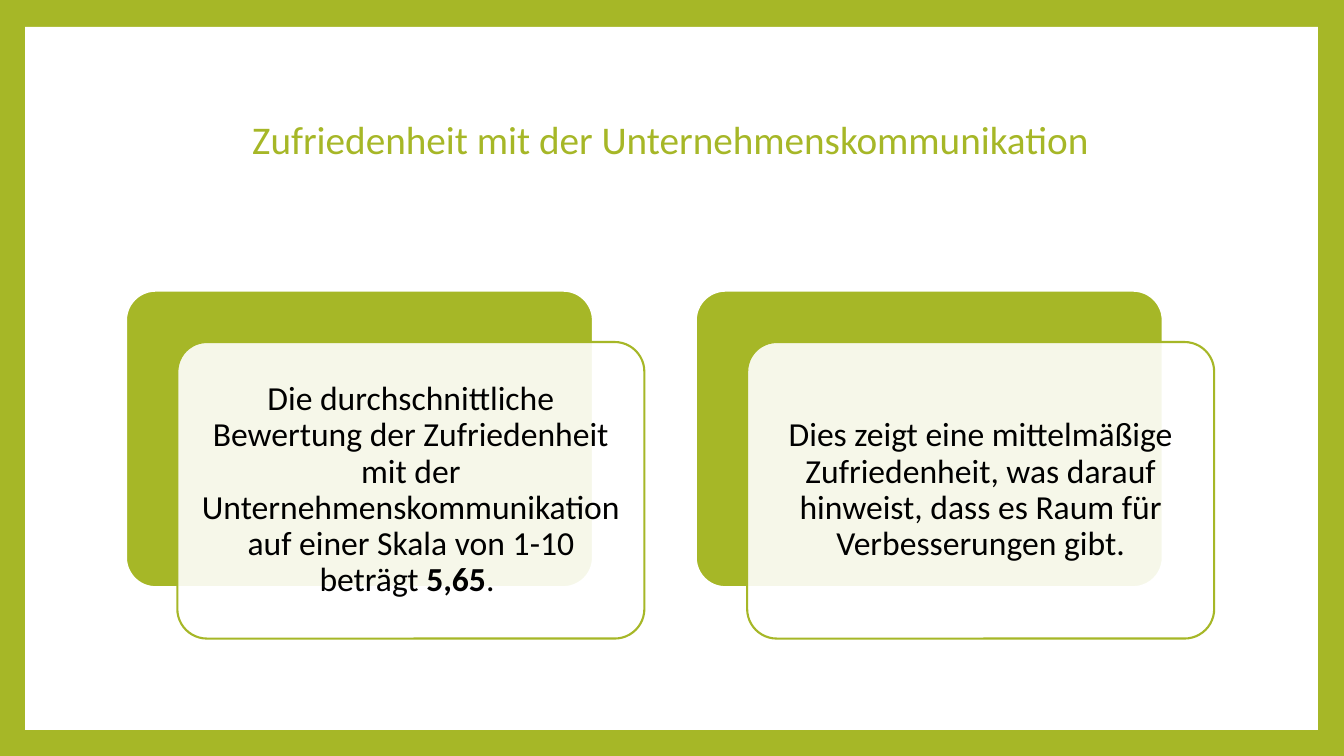
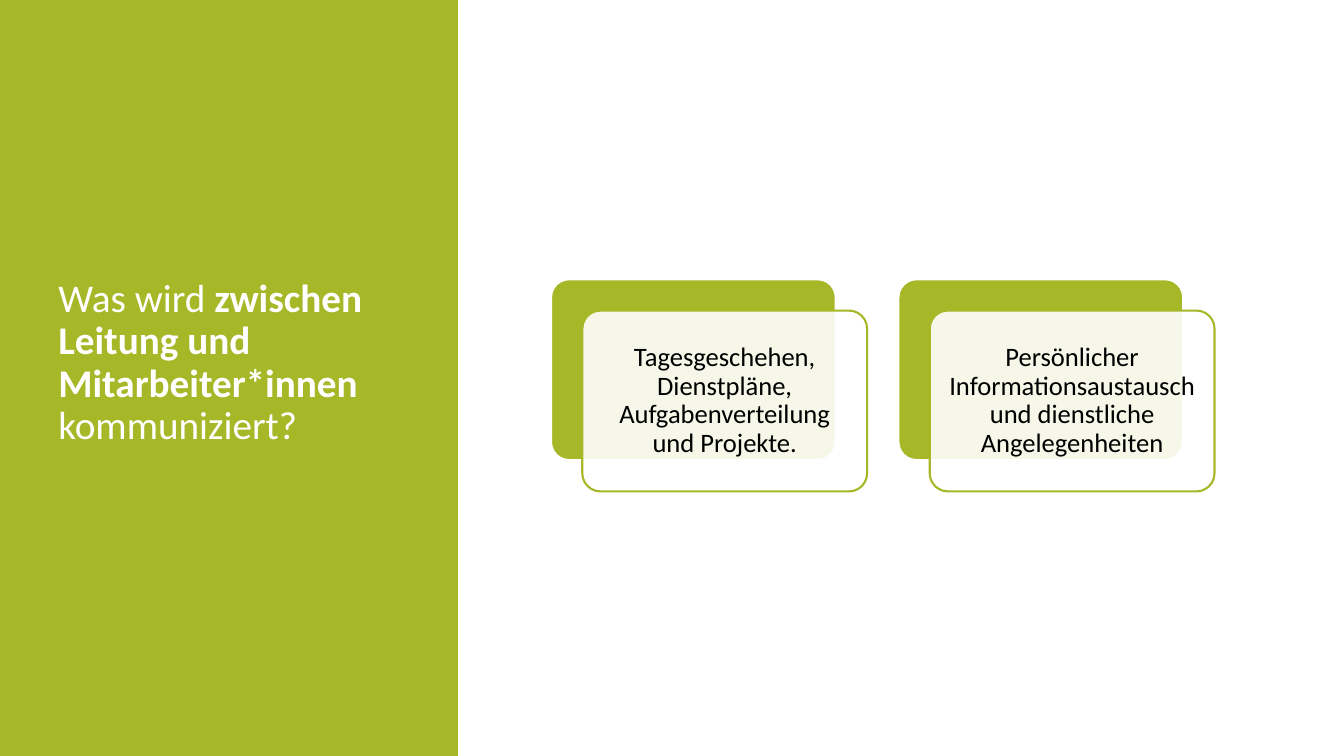
from lxml import etree
from pptx import Presentation
from pptx.dml.color import RGBColor
from pptx.enum.shapes import MSO_SHAPE
from pptx.enum.text import MSO_ANCHOR, MSO_AUTO_SIZE, PP_ALIGN
from pptx.oxml.ns import qn
from pptx.util import Inches, Pt

RECTANGLE, ROUNDED = MSO_SHAPE.RECTANGLE, MSO_SHAPE.ROUNDED_RECTANGLE
LEFT, CENTER = PP_ALIGN.LEFT, PP_ALIGN.CENTER
MIDDLE = MSO_ANCHOR.MIDDLE
NO_AUTOFIT = MSO_AUTO_SIZE.NONE
TITLE_ONLY = 5
COLUMNS, ROWS = 160, 90
GREEN, WHITE, BLACK = "A6B727", "FFFFFF", "000000"


def color(value):
    return RGBColor.from_string(value)


class Deck:
    """Holds the shared style and the current slide, measured on a 160 by 90 grid."""

    font = "Calibri"
    title_size = 28
    card_ratio = 0.635
    card_shift = 0.11
    card_pitch = 1.22

    def __init__(self):
        self.presentation = Presentation()
        self.presentation.slide_width = Inches(13.33)
        self.presentation.slide_height = Inches(7.5)
        self.slide = None

    def grid(self, left, top, width, height):
        column = self.presentation.slide_width / COLUMNS
        row = self.presentation.slide_height / ROWS
        return [int(value * unit) for value, unit in
                zip((left, top, width, height), (column, row, column, row))]

    def new_slide(self, background):
        layout = self.presentation.slide_layouts[TITLE_ONLY]
        self.slide = self.presentation.slides.add_slide(layout)
        fill = self.slide.background.fill
        fill.solid()
        fill.fore_color.rgb = color(background)

    def shape(self, kind, area, fill, line=None, opacity=100):
        shape = self.slide.shapes.add_shape(kind, *self.grid(*area))
        shape.shadow.inherit = False
        shape.fill.solid()
        shape.fill.fore_color.rgb = color(fill)
        if opacity < 100:
            fill_color = shape._element.spPr.find(qn("a:solidFill"))[0]
            etree.SubElement(fill_color, qn("a:alpha"), val=str(opacity * 1000))
        if line:
            shape.line.color.rgb = color(line)
            shape.line.width = Pt(1.5)
        else:
            shape.line.fill.background()
        return shape

    def panel(self, area, fill):
        panel = self.shape(RECTANGLE, area, fill)
        self.slide.shapes._spTree.insert(2, panel._element)

    def add_text(self, shape, parts, size, text_color, alignment):
        frame = shape.text_frame
        frame.word_wrap = True
        frame.auto_size = NO_AUTOFIT
        frame.vertical_anchor = MIDDLE
        paragraph = frame.paragraphs[0]
        paragraph.alignment = alignment
        paragraph.line_spacing = 0.9
        for text, bold in parts:
            run = paragraph.add_run()
            run.text = text
            run.font.name = self.font
            run.font.size = Pt(size)
            run.font.bold = bold
            run.font.color.rgb = color(text_color)

    def title(self, area, parts, text_color, alignment):
        title = self.slide.shapes.title
        title.left, title.top, title.width, title.height = self.grid(*area)
        self.add_text(title, parts, self.title_size, text_color, alignment)

    def cards(self, left, top, width, texts, size, inset):
        height = width * self.card_ratio
        shift = width * self.card_shift
        for index, parts in enumerate(texts):
            x = left + index * width * self.card_pitch
            back = self.shape(ROUNDED, (x, top, width, height), GREEN, WHITE)
            front = self.shape(ROUNDED, (x + shift, top + shift, width, height),
                               WHITE, GREEN, opacity=90)
            for card in (back, front):
                card.adjustments[0] = 0.1
            frame = front.text_frame
            frame.margin_left = frame.margin_right = Inches(inset)
            frame.margin_top = frame.margin_bottom = Inches(inset)
            self.add_text(front, parts, size, BLACK, CENTER)


def main():
    deck = Deck()

    deck.new_slide(GREEN)
    deck.panel((3, 3.2, 153.9, 83.7), WHITE)
    deck.title((15, 8, 129.6, 17.75),
               [("Zufriedenheit mit der Unternehmenskommunikation", False)],
               GREEN, CENTER)
    deck.cards(15, 34.6, 55.6, [
        [("Die durchschnittliche Bewertung der Zufriedenheit mit der "
          "Unternehmenskommunikation auf einer Skala von 1-10 beträgt ", False),
         ("5,65", True), (". ", False)],
        [("Dies zeigt eine mittelmäßige Zufriedenheit, was darauf hinweist, "
          "dass es Raum für Verbesserungen gibt.", False)],
    ], size=24, inset=0.1)

    deck.new_slide(WHITE)
    deck.panel((0, 0, 54.5, ROWS), GREEN)
    deck.title((5.75, 9, 43, 68.5),
               [("Was wird ", False),
                ("zwischen Leitung und Mitarbeiter*innen ", True),
                ("kommuniziert?", False)],
               WHITE, LEFT)
    deck.cards(65.6, 33.25, 33.9, [
        [("Tagesgeschehen, Dienstpläne, Aufgabenverteilung und Projekte.", False)],
        [("Persönlicher Informationsaustausch und dienstliche "
          "Angelegenheiten", False)],
    ], size=19, inset=0.08)

    deck.presentation.save("out.pptx")


if __name__ == "__main__":
    main()
